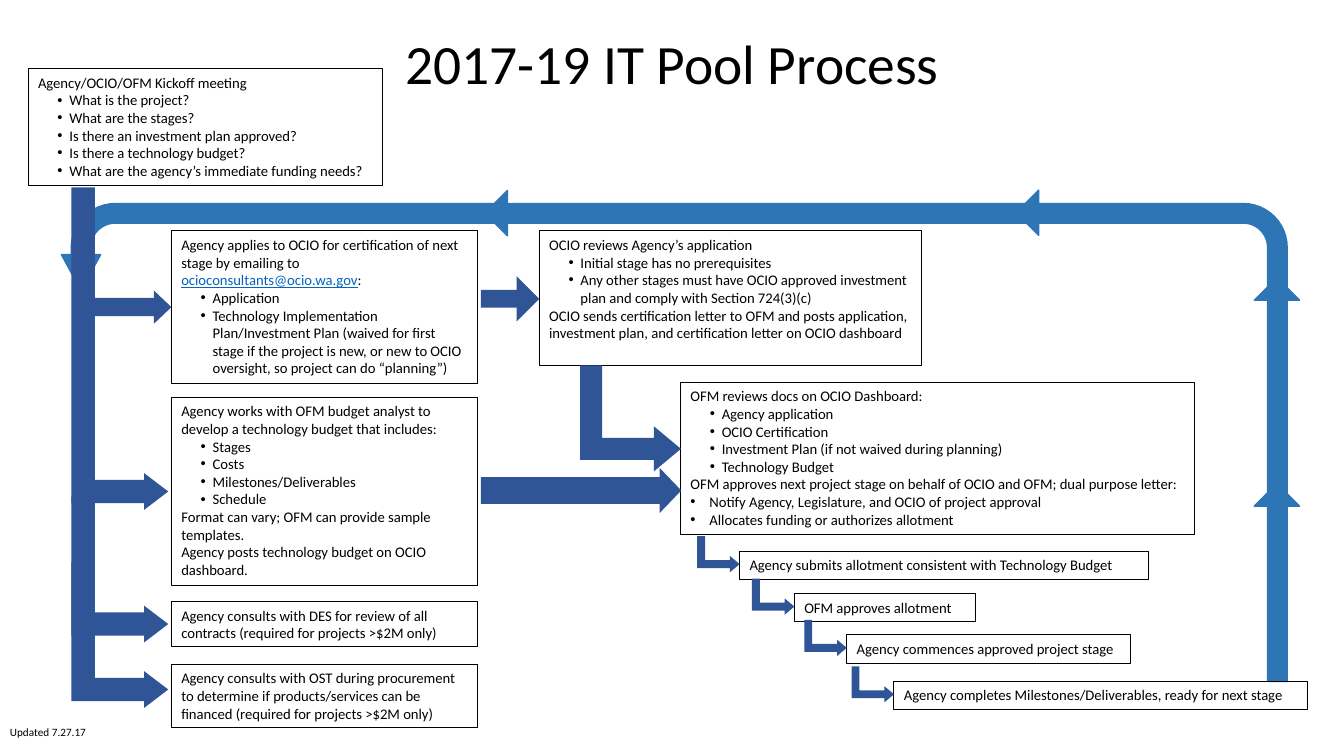
from lxml import etree
from pptx import Presentation
from pptx.dml.color import RGBColor
from pptx.enum.shapes import MSO_SHAPE
from pptx.enum.text import MSO_ANCHOR, PP_ALIGN
from pptx.oxml.ns import qn
from pptx.util import Cm, Pt

RECT = MSO_SHAPE.RECTANGLE
RIGHT_ARROW = MSO_SHAPE.RIGHT_ARROW
ELBOW_ARROW = MSO_SHAPE.BENT_UP_ARROW
UTURN_ARROW = MSO_SHAPE.U_TURN_ARROW
TOP, MIDDLE = MSO_ANCHOR.TOP, MSO_ANCHOR.MIDDLE
LEFT, CENTER = PP_ALIGN.LEFT, PP_ALIGN.CENTER

COLORS = {"text": "000000", "link": "0563C1", "flow": "2F5597", "loop": "2E75B6"}
FONT = "Calibri"

# Indents of a paragraph: left margin and first line, in cm
PLAIN, ITEM, NOTE = None, (0.79, -0.3), (0.48, -0.48)

TRUNK = (0.241, 0.19, 0.25)
BEND = (0.218, 0.224, 0.269)
SHORT = (0.393, 0.5)


def color(name):
    return RGBColor.from_string(COLORS[name])


def items(*lines, indent=ITEM):
    return [(indent, line) for line in lines]


def write(frame, paragraphs, size=10.5, align=LEFT, anchor=TOP, spacing=None, wrap=True):
    """Each paragraph is (indent, run, ...); a run is a text or (text, colour name)."""
    frame.word_wrap = wrap
    frame.vertical_anchor = anchor
    for number, (indent, *runs) in enumerate(paragraphs):
        paragraph = frame.add_paragraph() if number else frame.paragraphs[0]
        paragraph.alignment = align
        if spacing:
            paragraph.line_spacing = spacing
        if indent:
            properties = paragraph._p.get_or_add_pPr()
            properties.set("marL", str(Cm(indent[0])))
            properties.set("indent", str(Cm(indent[1])))
            etree.SubElement(properties, qn("a:buFont")).set("typeface", "Arial")
            etree.SubElement(properties, qn("a:buChar")).set("char", "•")
        for piece in runs:
            words, tone = (piece, "text") if isinstance(piece, str) else piece
            run = paragraph.add_run()
            run.text = words
            run.font.name = FONT
            run.font.size = Pt(size)
            run.font.color.rgb = color(tone)
            if tone == "link":
                run.font.underline = True


def add_box(slide, left, top, width, height, paragraphs):
    box = slide.shapes.add_shape(RECT, Cm(left), Cm(top), Cm(width), Cm(height))
    box.shadow.inherit = False
    box.fill.background()
    box.line.color.rgb = color("text")
    box.line.width = Pt(0.75)
    write(box.text_frame, paragraphs)


def add_arrow(slide, kind, left, top, width, height, adjust, tone="flow", turn=0):
    arrow = slide.shapes.add_shape(kind, Cm(left), Cm(top), Cm(width), Cm(height))
    arrow.shadow.inherit = False
    arrow.rotation = turn
    for index, value in enumerate(adjust):
        arrow.adjustments[index] = value
    arrow.fill.solid()
    arrow.fill.fore_color.rgb = color(tone)
    if tone == "loop":
        arrow.line.color.rgb = color(tone)
        arrow.line.width = Pt(1)
    else:
        arrow.line.fill.background()
    return arrow


def add_elbow(slide, left, top, width, height, adjust):
    """Down-then-right arrow that fills the given area after its quarter turn."""
    shift = (width - height) / 2
    add_arrow(slide, ELBOW_ARROW, left + shift, top - shift, height, width, adjust, turn=90)


def add_caption(slide, left, top, width, height, words, **style):
    caption = slide.shapes.add_textbox(Cm(left), Cm(top), Cm(width), Cm(height))
    write(caption.text_frame, [(PLAIN, words)], **style)


def add_return_loop(slide, left, top, width, height):
    # Direction heads: centre on the loop and turn
    for x, y, turn in ((11.4, 0.24, 180), (24.79, 0.23, 180), (30.63, 7.79, 270), (30.63, 2.6, 270)):
        add_arrow(slide, RIGHT_ARROW, left + x - 0.735, top + y - 0.57, 1.47, 1.14,
                  SHORT, "loop", turn)
    loop = add_arrow(slide, UTURN_ARROW, left, top, width, height,
                     (0.041, 0.041, 0.076, 0.092, 0.183), "loop")
    loop._element.spPr.find(qn("a:xfrm")).set("flipH", "1")


def add_agency_tasks(slide, left, top, width, height):
    # Kickoff meeting
    add_box(slide, left, top, 8.92, 2.95, [
        (PLAIN, "Agency/OCIO/OFM Kickoff meeting"),
        *items("What is the project?", "What are the stages?",
               "Is there an investment plan approved?", "Is there a technology budget?",
               "What are the agency’s immediate funding needs?")])
    # Tasks below it
    application = [
        (PLAIN, "Agency applies to OCIO for certification of next stage by emailing to ",
         ("ocioconsultants@ocio.wa.gov", "link"), ":"),
        *items("Application",
               "Technology Implementation Plan/Investment Plan (waived for first stage if the "
               "project is new, or new to OCIO oversight, so project can do “planning”)")]
    budget = [
        (PLAIN, "Agency works with OFM budget analyst to develop a technology budget that includes:"),
        *items("Stages", "Costs", "Milestones/Deliverables", "Schedule"),
        (PLAIN, "Format can vary; OFM can provide sample templates."),
        (PLAIN, "Agency posts technology budget on OCIO dashboard.")]
    contracts = [(PLAIN, "Agency consults with DES for review of all contracts "
                         "(required for projects >$2M only)")]
    procurement = [(PLAIN, "Agency consults with OST during procurement to determine if "
                           "products/services can be financed (required for projects >$2M only)")]
    for offset, depth, task in ((4.09, 3.84, application), (8.28, 4.75, budget),
                                (13.43, 1.14, contracts), (height - 1.6, 1.6, procurement)):
        add_box(slide, left + 3.61, top + offset, width - 3.61, depth, task)
    # Trunk with its branches
    for offset, depth in ((2.99, 8.13), (10.78, 3.68), (12.43, 3.68)):
        add_elbow(slide, left + 1.09, top + offset, 2.44, depth, TRUNK)
    add_arrow(slide, RIGHT_ARROW, left + 1.55, top + 5.59, 2.06, 0.84, (0.547, 0.526))


def add_reviews(slide, left, top, width, height):
    add_box(slide, left + 1.47, top, 9.63, 3.4, [
        (PLAIN, "OCIO reviews Agency’s application"),
        *items("Initial stage has no prerequisites",
               "Any other stages must have OCIO approved investment plan and comply with "
               "Section 724(3)(c)"),
        (PLAIN, "OCIO sends certification letter to OFM and posts application, investment plan, "
                "and certification letter on OCIO dashboard")])
    add_box(slide, left + 5.03, top + 3.81, width - 5.03, height - 3.81, [
        (PLAIN, "OFM reviews docs on OCIO Dashboard:"),
        *items("Agency application", "OCIO Certification",
               "Investment Plan (if not waived during planning)", "Technology Budget"),
        (PLAIN, "OFM approves next project stage on behalf of OCIO and OFM; dual purpose letter:"),
        *items("Notify Agency, Legislature, and OCIO of project approval",
               "Allocates funding or authorizes allotment", indent=NOTE)])
    # Arrows into the reviews
    add_arrow(slide, RIGHT_ARROW, left, top + 1.14, 1.47, 1.14, SHORT)
    add_arrow(slide, RIGHT_ARROW, left, top + 5.97, 5.05, 1.14, (0.59, 0.48))
    add_elbow(slide, left + 2.5, top + 3.39, 2.54, 2.67, BEND)


def add_stage_steps(slide, left, top):
    steps = (
        (0, 0, 10.31, "Agency submits allotment consistent with Technology Budget"),
        (1.38, 1.07, 4.57, "OFM approves allotment"),
        (2.7, 2.11, 7.16, "Agency commences approved project stage"),
        (3.89, 3.28, 10.41, "Agency completes Milestones/Deliverables, ready for next stage"))
    for x, y, width, step in steps:
        add_box(slide, left + x, top + y, width, 0.71, [(PLAIN, step)])
        add_elbow(slide, left + x - 1.07, top + y - 0.38, 1.07, 0.91, BEND)


def main():
    deck = Presentation()
    deck.slide_width, deck.slide_height = Cm(33.87), Cm(19.05)
    slide = deck.slides.add_slide(deck.slide_layouts[6])
    add_return_loop(slide, 1.55, 5.13, 30.89, 12.04)
    add_agency_tasks(slide, 0.71, 1.73, 11.33, 16.61)
    add_reviews(slide, 12.12, 5.82, 17.98, 7.65)
    add_stage_steps(slide, 18.64, 13.89)
    add_caption(slide, 2.34, 1.02, 29.21, 1.3, "2017-19 IT Pool Process",
                size=39.6, align=CENTER, anchor=MIDDLE, spacing=0.9)
    add_caption(slide, 0, 18.16, 2.44, 0.61, "Updated 7.27.17", size=8, wrap=False)
    deck.save("out.pptx")


if __name__ == "__main__":
    main()
